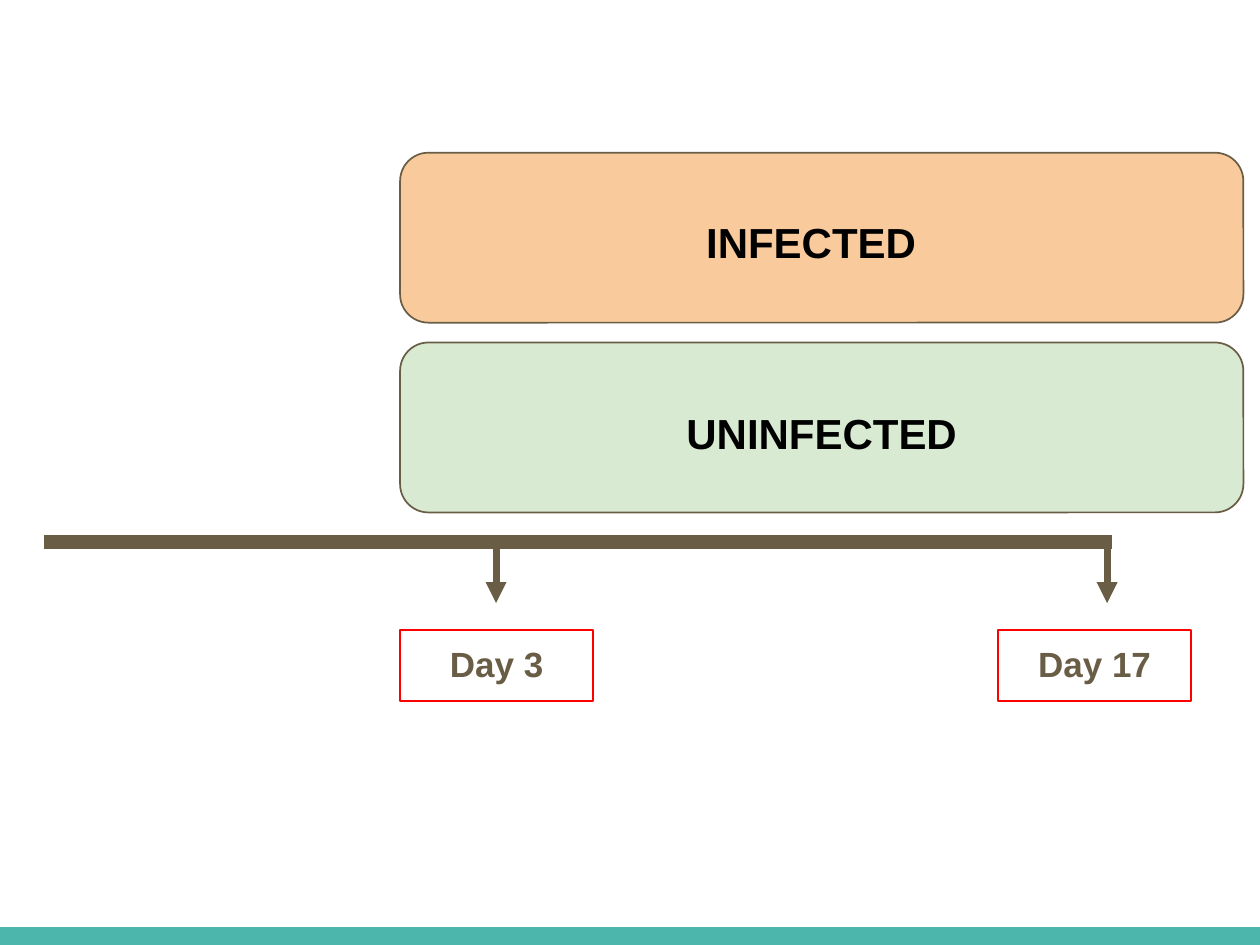
from pptx import Presentation
from pptx.dml.color import RGBColor
from pptx.enum.shapes import MSO_CONNECTOR as Connector, MSO_SHAPE as Shape
from pptx.enum.text import MSO_ANCHOR as Anchor, PP_ALIGN as Align
from pptx.oxml.ns import qn
from pptx.util import Cm, Pt
from lxml.etree import SubElement

TEAL = RGBColor(0x4D, 0xB6, 0xAC)
BROWN = RGBColor(0x69, 0x5D, 0x46)
RED = RGBColor(0xFF, 0x00, 0x00)
ORANGE = RGBColor(0xF9, 0xCB, 0x9C)
GREEN = RGBColor(0xD9, 0xEA, 0xD3)
BLACK = RGBColor(0x00, 0x00, 0x00)

PAGE_WIDTH, PAGE_HEIGHT = 19.05, 14.29
FOOTER_HEIGHT = 0.27
GROUP_LEFT, GROUP_WIDTH, GROUP_HEIGHT = 6.05, 12.75, 2.57
DAY_TOP, DAY_WIDTH, DAY_HEIGHT = 9.53, 2.92, 1.07
TIMELINE_Y, ARROW_TOP, ARROW_TIP = 8.2, 8.23, 9.12

# name, fill, bar top, label position and size
GROUPS = [
    ("INFECTED", ORANGE, 2.31, (10.03, 2.72, 4.47, 1.88)),
    ("UNINFECTED", GREEN, 5.18, (9.96, 5.49, 4.93, 2.11)),
]
# name, box left, arrow x
DAYS = [("Day 3", GROUP_LEFT, 7.5), ("Day 17", 15.09, 16.74)]


def write(shape, text, size=18, color=BLACK, anchor=Anchor.MIDDLE):
    """Put centred bold text into a shape."""
    frame = shape.text_frame
    frame.word_wrap = True
    frame.vertical_anchor = anchor
    frame.margin_left = frame.margin_right = Cm(0.18)
    frame.margin_top = frame.margin_bottom = Cm(0.18)
    para = frame.paragraphs[0]
    para.alignment = Align.CENTER
    span = para.add_run()
    span.text = text
    span.font.name = "Arial"
    span.font.size = Pt(size)
    span.font.bold = True
    span.font.color.rgb = color


class Timeline:
    """Style of the timeline and the page it is drawn on."""

    outline_width = Pt(0.75)
    line_color = BROWN

    def __init__(self, page):
        self.shapes = page.shapes

    def box(self, kind, left, top, width, height, fill=None, outline=None):
        shape = self.shapes.add_shape(kind, Cm(left), Cm(top), Cm(width), Cm(height))
        shape.shadow.inherit = False
        if fill is None:
            shape.fill.background()
        else:
            shape.fill.solid()
            shape.fill.fore_color.rgb = fill
        if outline is None:
            shape.line.fill.background()
        else:
            shape.line.color.rgb = outline
            shape.line.width = self.outline_width
        return shape

    def label(self, text, left, top, width, height):
        box = self.shapes.add_textbox(Cm(left), Cm(top), Cm(width), Cm(height))
        write(box, text)

    def line(self, x1, y1, x2, y2, width, arrow=False):
        line = self.shapes.add_connector(
            Connector.STRAIGHT, Cm(x1), Cm(y1), Cm(x2), Cm(y2))
        line.line.color.rgb = self.line_color
        line.line.width = Pt(width)
        if arrow:
            SubElement(line.line._get_or_add_ln(), qn("a:tailEnd"), type="triangle")
        SubElement(line._element.spPr, qn("a:effectLst"))

    def group(self, name, fill, top, place):
        self.box(Shape.ROUNDED_RECTANGLE, GROUP_LEFT, top, GROUP_WIDTH,
                 GROUP_HEIGHT, fill, self.line_color)
        self.label(name, *place)

    def day(self, name, left, arrow_x):
        self.line(arrow_x, ARROW_TOP, arrow_x, ARROW_TIP, 3, arrow=True)
        box = self.box(Shape.RECTANGLE, left, DAY_TOP, DAY_WIDTH, DAY_HEIGHT,
                       outline=RED)
        write(box, name, size=15, color=self.line_color, anchor=Anchor.TOP)


def main():
    deck = Presentation()
    deck.slide_width, deck.slide_height = Cm(PAGE_WIDTH), Cm(PAGE_HEIGHT)
    page = deck.slides.add_slide(deck.slide_layouts[6])
    timeline = Timeline(page)
    timeline.box(Shape.RECTANGLE, 0, PAGE_HEIGHT - FOOTER_HEIGHT, PAGE_WIDTH,
                 FOOTER_HEIGHT, TEAL)
    timeline.line(0.66, TIMELINE_Y, 16.81, TIMELINE_Y, 6)
    for group in GROUPS:
        timeline.group(*group)
    for day in DAYS:
        timeline.day(*day)
    deck.save("out.pptx")


if __name__ == "__main__":
    main()
